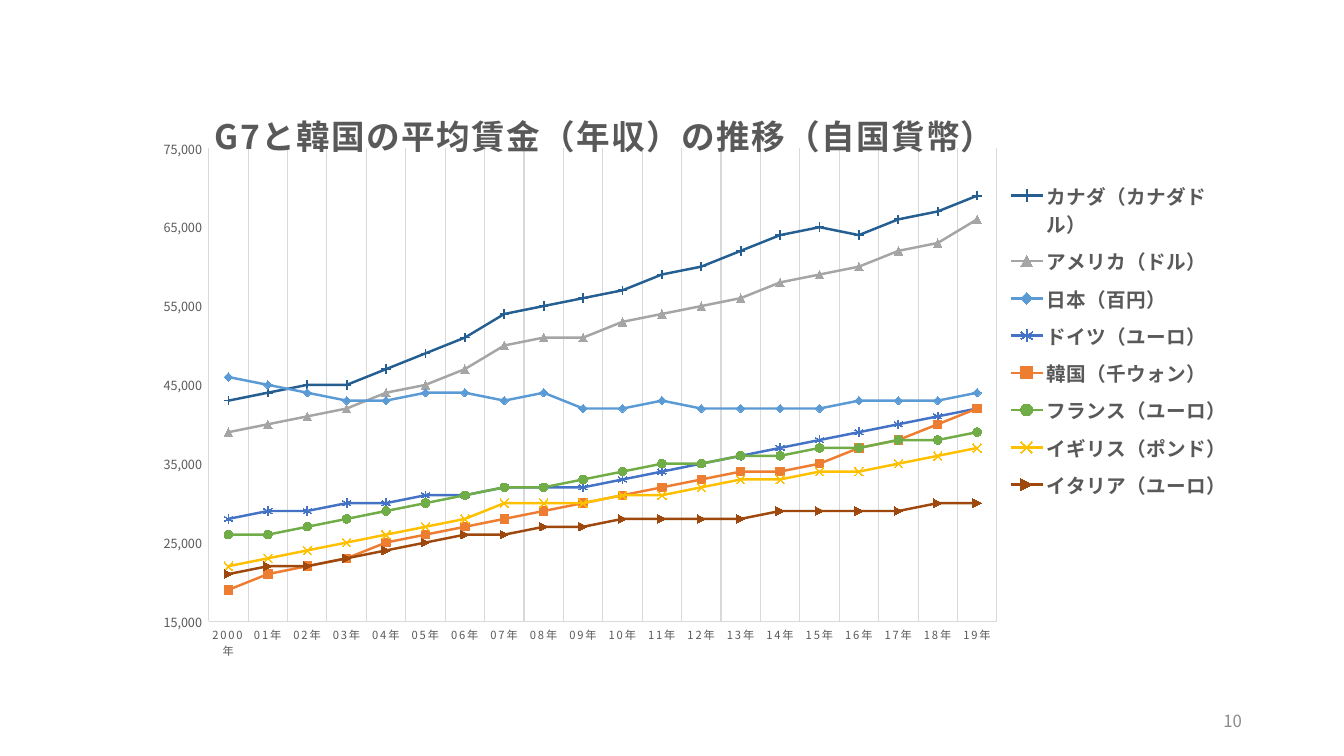
from dataclasses import dataclass

from pptx import Presentation
from pptx.chart.data import CategoryChartData
from pptx.dml.color import RGBColor
from pptx.enum.chart import XL_CHART_TYPE as Kind
from pptx.enum.chart import XL_LEGEND_POSITION as Spot
from pptx.enum.chart import XL_MARKER_STYLE as Mark
from pptx.enum.chart import XL_TICK_MARK as Tick
from pptx.enum.text import MSO_ANCHOR as Anchor
from pptx.enum.text import PP_ALIGN as Align
from pptx.oxml.ns import qn
from pptx.util import Cm, Pt

FONT = "Noto Sans CJK JP"
DARK = "595959"
PALE = "D9D9D9"


@dataclass
class Wage:
    name: str
    color: str
    mark: Mark
    solid: bool
    vals: list[int]


WAGES = [
    Wage("カナダ（カナダドル）", "255E91", Mark.PLUS, False,
         [43, 44, 45, 45, 47, 49, 51, 54, 55, 56, 57, 59, 60, 62, 64, 65, 64, 66, 67, 69]),
    Wage("アメリカ（ドル）", "A5A5A5", Mark.TRIANGLE, True,
         [39, 40, 41, 42, 44, 45, 47, 50, 51, 51, 53, 54, 55, 56, 58, 59, 60, 62, 63, 66]),
    Wage("日本（百円）", "5B9BD5", Mark.DIAMOND, True,
         [46, 45, 44, 43, 43, 44, 44, 43, 44, 42, 42, 43, 42, 42, 42, 42, 43, 43, 43, 44]),
    Wage("ドイツ（ユーロ）", "4472C4", Mark.STAR, False,
         [28, 29, 29, 30, 30, 31, 31, 32, 32, 32, 33, 34, 35, 36, 37, 38, 39, 40, 41, 42]),
    Wage("韓国（千ウォン）", "ED7D31", Mark.SQUARE, True,
         [19, 21, 22, 23, 25, 26, 27, 28, 29, 30, 31, 32, 33, 34, 34, 35, 37, 38, 40, 42]),
    Wage("フランス（ユーロ）", "70AD47", Mark.CIRCLE, True,
         [26, 26, 27, 28, 29, 30, 31, 32, 32, 33, 34, 35, 35, 36, 36, 37, 37, 38, 38, 39]),
    Wage("イギリス（ポンド）", "FFC000", Mark.X, False,
         [22, 23, 24, 25, 26, 27, 28, 30, 30, 30, 31, 31, 32, 33, 33, 34, 34, 35, 36, 37]),
    Wage("イタリア（ユーロ）", "9E480E", Mark.DOT, True,
         [21, 22, 22, 23, 24, 25, 26, 26, 27, 27, 28, 28, 28, 28, 29, 29, 29, 29, 30, 30]),
]


def rgb(code: str) -> RGBColor:
    return RGBColor.from_string(code)


def style(font, size: float, color: str = DARK, bold: bool = False) -> None:
    font.name = FONT
    font.size = Pt(size)
    font.bold = bold
    font.color.rgb = rgb(color)


def write(frame, text: str, *, size: float, color: str = DARK,
          bold: bool = False, align: Align = Align.LEFT, gap: int = 0) -> None:
    para = frame.paragraphs[0]
    para.alignment = align
    run = para.add_run()
    run.text = text
    style(run.font, size, color, bold)
    if gap:
        run.font._element.set("spc", str(gap))


def stroke(line, color: str, width: float) -> None:
    line.color.rgb = rgb(color)
    line.width = Pt(width)


def place(owner, index: int, **sides: float) -> None:
    for old in owner.findall(qn("c:layout")):
        owner.remove(old)
    layout = owner.makeelement(qn("c:layout"), {})
    owner.insert(index, layout)
    manual = layout.makeelement(qn("c:manualLayout"), {})
    layout.append(manual)
    parts = {"xMode": "edge", "yMode": "edge", **sides}
    if index == 0:
        parts = {"layoutTarget": "inner", **parts}
    for key, val in parts.items():
        manual.append(manual.makeelement(qn(f"c:{key}"), {"val": str(val)}))


def set_axes(chart) -> None:
    years, pay = chart.category_axis, chart.value_axis
    for axis, size in ((years, 8), (pay, 9)):
        axis.major_tick_mark = axis.minor_tick_mark = Tick.NONE
        stroke(axis.format.line, PALE, 0.75)
        style(axis.tick_labels.font, size)
    years.tick_labels.font._element.set("spc", "120")
    years.has_major_gridlines = True
    stroke(years.major_gridlines.format.line, PALE, 0.75)
    pay.has_major_gridlines = False
    pay.minimum_scale, pay.maximum_scale = 15000, 75000
    pay.major_unit = 10000
    pay.tick_labels.number_format = "#,##0_ ;\\-#,##0\\ "
    pay.tick_labels.number_format_is_linked = False


def draw_line(line, wage: Wage) -> None:
    line.smooth = False
    stroke(line.format.line, wage.color, 1.75)
    mark = line.marker
    mark.style, mark.size = wage.mark, 6
    stroke(mark.format.line, wage.color, 0.75)
    if wage.solid:
        mark.format.fill.solid()
        mark.format.fill.fore_color.rgb = rgb(wage.color)
    else:
        mark.format.fill.background()


def add_wages(slide) -> None:
    data = CategoryChartData(number_format="#,##0")
    data.categories = ["2000年"] + [f"{year:02}年" for year in range(1, 20)]
    for wage in WAGES:
        data.add_series(wage.name, [val * 1000 for val in wage.vals])
    chart = slide.shapes.add_chart(Kind.LINE_MARKERS, Cm(2.34), Cm(2.08),
                                   Cm(29.21), Cm(15.09), data).chart
    style(chart.font, 10, "000000")
    set_axes(chart)
    for line, wage in zip(chart.plots[0].series, WAGES):
        draw_line(line, wage)

    title = chart.chart_title
    write(title.text_frame, "G7と韓国の平均賃金（年収）の推移（自国貨幣）",
          size=24, bold=True, align=Align.CENTER, gap=100)
    title.include_in_layout = False
    place(title._element, 1, x=0.1, y=0.03)

    chart.has_legend = True
    legend = chart.legend
    legend.position = Spot.RIGHT
    legend.include_in_layout = False
    style(legend.font, 14, bold=True)
    place(legend._element, 1, x=0.79, y=0.15, w=0.19, h=0.56)
    place(chart._chartSpace.chart.plotArea, 0, x=0.1, y=0.11, w=0.68, h=0.79)


def add_page(slide) -> None:
    box = slide.shapes.add_textbox(Cm(23.93), Cm(17.65), Cm(7.62), Cm(1.02))
    box.text_frame.word_wrap = True
    box.text_frame.vertical_anchor = Anchor.MIDDLE
    write(box.text_frame, "10", size=12, color="8C8C8C", align=Align.RIGHT)


def main() -> None:
    deck = Presentation()
    deck.slide_width, deck.slide_height = Cm(33.87), Cm(19.05)
    slide = deck.slides.add_slide(deck.slide_layouts[6])
    add_wages(slide)
    add_page(slide)
    deck.save("out.pptx")


if __name__ == "__main__":
    main()
